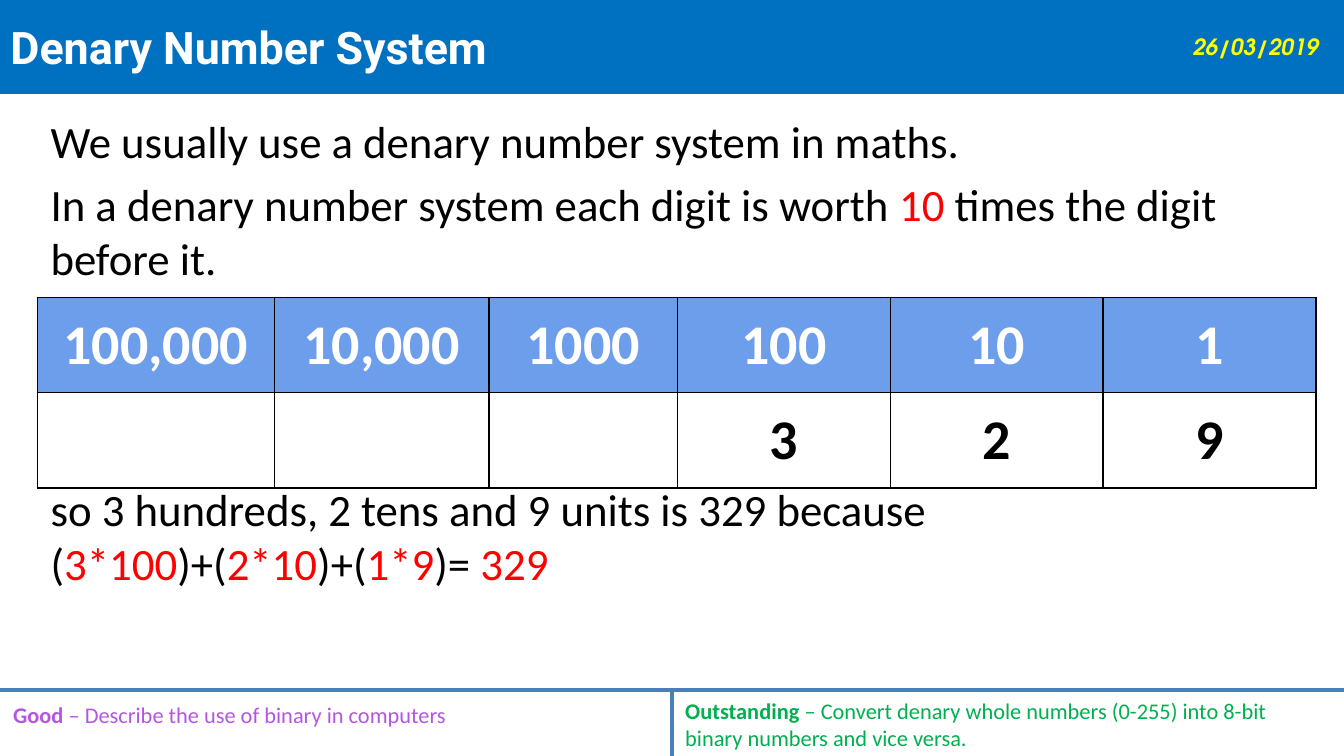
from lxml.etree import SubElement
from pptx import Presentation
from pptx.dml.color import RGBColor
from pptx.enum.shapes import MSO_CONNECTOR, MSO_SHAPE
from pptx.enum.text import MSO_ANCHOR as ANCHOR, PP_ALIGN as ALIGN
from pptx.oxml.ns import qn
from pptx.util import Pt

COLORS = {
    "banner": "0070C0", "rule": "4B7EBC", "header": "6D9EEB",
    "good": "B556E0", "outstanding": "00B050", "date": "FFFF00",
    "white": "FFFFFF", "black": "000000", "red": "FF0000",
}
RGB = {name: RGBColor.from_string(value) for name, value in COLORS.items()}
WIDTH, HEIGHT = 720, 405
FOOTER_TOP = 369.5


def add_run(paragraph, text, color, **formats):
    run = paragraph.add_run()
    run.text = text
    run.font.color.rgb = RGB[color]
    for key, value in ({"name": "Calibri", "bold": False} | formats).items():
        setattr(run.font, key, value)


def add_text(left, top, width, height, paragraphs, anchor=ANCHOR.TOP, space=0):
    """Add a text box; each paragraph is a list of (text, color, formats)."""
    frame = slide.shapes.add_textbox(Pt(left), Pt(top), Pt(width), Pt(height)).text_frame
    frame.word_wrap = True
    frame.vertical_anchor = anchor
    for index, runs in enumerate(paragraphs):
        paragraph = frame.paragraphs[0] if index == 0 else frame.add_paragraph()
        paragraph.space_before = Pt(space)
        for text, color, formats in runs:
            add_run(paragraph, text, color, **formats)
    return frame


prs = Presentation()
prs.slide_width, prs.slide_height = Pt(WIDTH), Pt(HEIGHT)
slide = prs.slides.add_slide(prs.slide_layouts[6])

# Footer: two learning goals divided by rules
goals = [
    (0, 372, "good", "Good", " – Describe the use of binary in computers"),
    (WIDTH / 2, 370, "outstanding", "Outstanding",
     " – Convert denary whole numbers (0-255) into 8-bit binary numbers and vice versa."),
]
for left, top, color, level, goal in goals:
    add_text(left, top, 352, HEIGHT - top, [[
        (level, color, {"size": Pt(12), "bold": True}),
        (goal, color, {"size": Pt(12)}),
    ]])

for ends in [(0, FOOTER_TOP, WIDTH, FOOTER_TOP), (WIDTH / 2, FOOTER_TOP, WIDTH / 2, HEIGHT)]:
    rule = slide.shapes.add_connector(MSO_CONNECTOR.STRAIGHT, *map(Pt, ends))
    rule.line.color.rgb = RGB["rule"]
    rule.line.width = Pt(2.25)
    SubElement(rule._element.spPr, qn("a:effectLst"))

banner = slide.shapes.add_shape(MSO_SHAPE.RECTANGLE, 0, 0, Pt(WIDTH), Pt(50.4))
banner.shadow.inherit = False
banner.fill.solid()
banner.fill.fore_color.rgb = RGB["banner"]
banner.line.fill.background()

# Explanation, with room for the table before the last paragraph
explanation = [
    [("We usually use a denary number system in maths.", "black")],
    [("In a denary number system each digit is worth ", "black"), ("10", "red"),
     (" times the digit before it.", "black")],
    [("so 3 hundreds, 2 tens and 9 units is 329 because (", "black"), ("3*100", "red"),
     (")+(", "black"), ("2*10", "red"), (")+(", "black"), ("1*9", "red"),
     (")= ", "black"), ("329", "red")],
]
body = add_text(20, 57.6, 680, 304, [
    [(text, color, {"size": Pt(24)}) for text, color in runs] for runs in explanation
], space=4.8)
body.paragraphs[-1].space_before = Pt(106)

add_text(-1.5, 6, WIDTH, 38, [[
    ("Denary Number System", "white", {"name": "Roboto", "size": Pt(24), "bold": True}),
]], ANCHOR.MIDDLE)
add_text(632, 14.4, 86.5, 21.6, [[
    ("26/03/2019", "date",
     {"name": "TeX Gyre Adventor", "size": Pt(12), "bold": True, "italic": True}),
]], ANCHOR.MIDDLE)

# Place value table
place_values = [
    ["100,000", "10,000", "1000", "100", "10", "1"],
    ["", "", "", "3", "2", "9"],
]
column_widths = [127, 115, 101, 114, 114, 114]
row_height = 51
table = slide.shapes.add_table(
    2, 6, Pt(20), Pt(159.3), Pt(sum(column_widths)), Pt(2 * row_height)).table
table.first_row = table.horz_banding = False
for column, width in zip(table.columns, column_widths):
    column.width = Pt(width)
cell_format = {f"margin_{side}": Pt(7.2) for side in ("left", "right", "top", "bottom")}

for row, values in enumerate(place_values):
    table.rows[row].height = Pt(row_height)
    for col, value in enumerate(values):
        cell = table.cell(row, col)
        for key, setting in cell_format.items():
            setattr(cell, key, setting)
        properties = cell._tc.get_or_add_tcPr()
        for side in ("lnL", "lnR", "lnT", "lnB"):
            border = SubElement(properties, qn(f"a:{side}"), w=str(Pt(1)))
            fill = SubElement(border, qn("a:solidFill"))
            SubElement(fill, qn("a:srgbClr"), val=COLORS["black"])
        if row == 0:
            cell.fill.solid()
            cell.fill.fore_color.rgb = RGB["header"]
        else:
            cell.fill.background()
        if value:
            paragraph = cell.text_frame.paragraphs[0]
            paragraph.alignment = ALIGN.CENTER
            add_run(paragraph, value, "black" if row else "white", size=Pt(30), bold=True)

prs.save("out.pptx")
